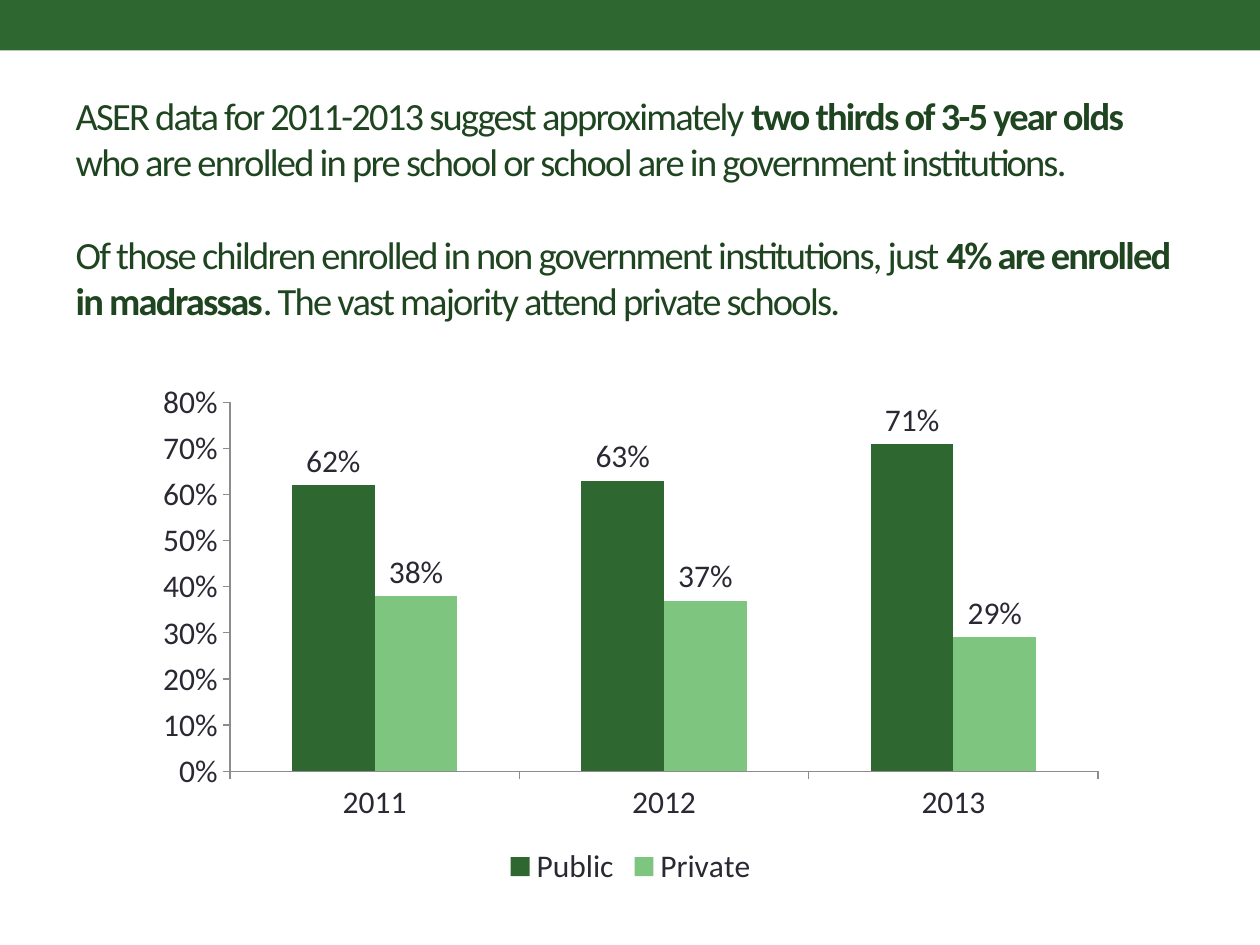
"""Build a slide on public and private enrolment of 3-5 year olds."""
from pptx import Presentation
from pptx.chart.data import CategoryChartData
from pptx.dml.color import RGBColor
from pptx.enum.chart import XL_CHART_TYPE, XL_LABEL_POSITION, XL_LEGEND_POSITION, XL_TICK_MARK
from pptx.enum.shapes import MSO_SHAPE
from pptx.enum.text import MSO_ANCHOR, MSO_AUTO_SIZE, PP_ALIGN
from pptx.util import Inches, Pt

FONT = "Calibri"
GREEN = RGBColor(0x2E, 0x67, 0x30)
LIGHT = RGBColor(0x7E, 0xC5, 0x80)
DEEP = RGBColor(0x1E, 0x45, 0x20)
INK = RGBColor(0x29, 0x29, 0x34)
GREY = RGBColor(0x8C, 0x8C, 0x8C)

TITLE = [
    [("ASER data for 2011-2013 suggest approximately ", False),
     ("two thirds of 3-5 year olds ", True),
     ("who are enrolled in pre school or school are in government institutions.", False)],
    [("Of those children enrolled in non government institutions, just ", False),
     ("4% are enrolled in madrassas", True),
     (". The vast majority attend private schools.", False)],
]
YEARS = ["2011", "2012", "2013"]
SERIES = [("Public", (0.62, 0.63, 0.71), GREEN),
          ("Private", (0.38, 0.37, 0.29), LIGHT)]


def box(*sides):
    return [Inches(side) for side in sides]


def add_band(slide, width):
    band = slide.shapes.add_shape(MSO_SHAPE.RECTANGLE, 0, 0, width, Inches(0.4))
    band.shadow.inherit = False
    band.fill.solid()
    band.fill.fore_color.rgb = GREEN
    band.line.fill.background()


def fill_title(title):
    title.left, title.top, title.width, title.height = box(0.5, 0.58, 9, 2.14)
    frame = title.text_frame
    frame.word_wrap = True
    frame.auto_size = MSO_AUTO_SIZE.NONE
    frame.vertical_anchor = MSO_ANCHOR.MIDDLE
    for row, parts in enumerate(TITLE):
        para = frame.add_paragraph() if row else frame.paragraphs[0]
        para.alignment = PP_ALIGN.LEFT
        para.space_before = Pt(26.5 * row)
        for words, bold in parts:
            run = para.add_run()
            run.text = words
            font = run.font
            font.name, font.size, font.bold = FONT, Pt(22), bold
            font.color.rgb = DEEP
            run._r.get_or_add_rPr().set("spc", "-100")


def add_bars(slide):
    data = CategoryChartData(number_format="0%")
    data.categories = YEARS
    for name, vals, _ in SERIES:
        data.add_series(name, vals)
    chart = slide.shapes.add_chart(
        XL_CHART_TYPE.COLUMN_CLUSTERED, *box(1.14, 2.96, 7.73, 4.12), data).chart
    chart.has_title = False
    chart.font.name, chart.font.size = FONT, Pt(18)
    chart.font.color.rgb = INK
    chart.has_legend = True
    chart.legend.position = XL_LEGEND_POSITION.BOTTOM
    chart.legend.include_in_layout = False
    for axis in (chart.category_axis, chart.value_axis):
        axis.has_major_gridlines = False
        axis.major_tick_mark = XL_TICK_MARK.OUTSIDE
        axis.minor_tick_mark = XL_TICK_MARK.NONE
        axis.format.line.color.rgb = GREY
        axis.format.line.width = Pt(0.75)
    scale = chart.value_axis
    scale.minimum_scale, scale.maximum_scale, scale.major_unit = 0, 0.8, 0.1
    scale.tick_labels.number_format = "0%"
    scale.tick_labels.number_format_is_linked = False
    plot = chart.plots[0]
    plot.gap_width, plot.overlap = 150, 0
    plot.vary_by_categories = False
    for bars, (_, _, color) in zip(plot.series, SERIES):
        bars.format.fill.solid()
        bars.format.fill.fore_color.rgb = color
        bars.invert_if_negative = False
        labels = bars.data_labels
        labels.show_value = True
        labels.number_format, labels.number_format_is_linked = "0%", False
        labels.position = XL_LABEL_POSITION.OUTSIDE_END


def main():
    deck = Presentation()
    deck.slide_width, deck.slide_height = box(10, 7.5)
    slide = deck.slides.add_slide(deck.slide_layouts[5])
    add_band(slide, deck.slide_width)
    fill_title(slide.shapes.title)
    add_bars(slide)
    deck.save("out.pptx")


if __name__ == "__main__":
    main()
